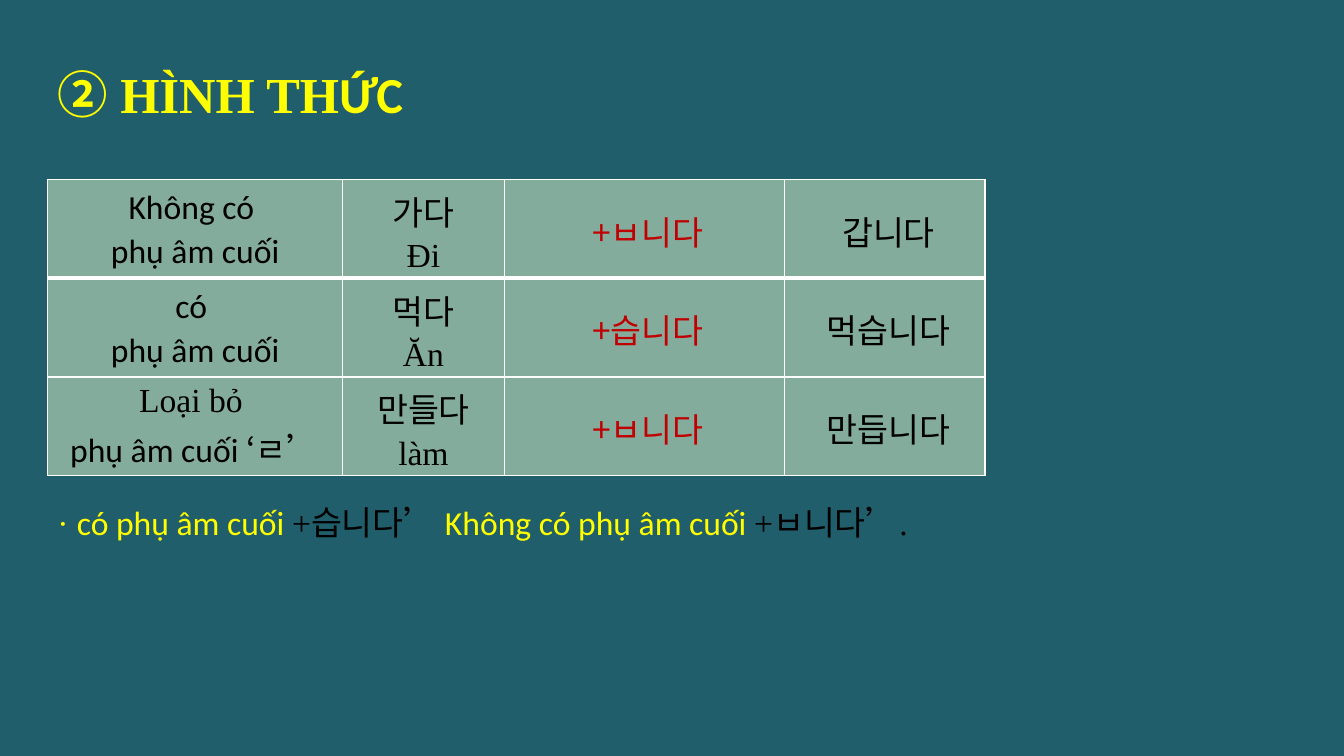
"""Builds a slide on the forms of the Korean formal verb ending."""
from lxml import etree
from pptx import Presentation
from pptx.dml.color import RGBColor
from pptx.enum.text import MSO_ANCHOR, PP_ALIGN
from pptx.oxml.ns import qn
from pptx.util import Inches, Pt

CENTER, JUSTIFY = PP_ALIGN.CENTER, PP_ALIGN.JUSTIFY
MIDDLE = MSO_ANCHOR.MIDDLE

COLOURS = {"back": "215E6B", "cell": "84AC9D", "line": "FFFFFF",
           "accent": "FFFF00", "text": "000000", "ending": "C00000"}
SANS, SERIF, KOREAN = "Calibri", "Times New Roman", "Noto Sans CJK KR"

TITLE = [("②", KOREAN, "accent"), (" HÌNH TH", SERIF, "accent"), ("ỨC", SANS, "accent")]
SUMMARY = [("· ", SERIF, "accent"), ("có phụ âm cuối ", SANS, "accent"),
           ("+습니다’ ", SERIF, "text"), ("Không có phụ âm cuối ", SANS, "accent"),
           ("+ㅂ니다’. ", SERIF, "text")]
FORMS = [
    ([("Không có ", SANS)], [("phụ âm cuối", SANS)], "가다", "Đi", "+ㅂ니다", "갑니다"),
    ([("có ", SANS)], [("phụ âm cuối", SANS)], "먹다", "Ăn", "+습니다", "먹습니다"),
    ([("Loại bỏ ", SERIF)], [("phụ âm cuối ", SANS), ("‘ㄹ’", KOREAN)],
     "만들다", "làm", "+ㅂ니다", "만듭니다"),
]

WIDTH, HEIGHT = 13.33, 7.5
LEFT = 0.47
COLUMNS = [2.93, 1.6, 2.78, 1.99]
ROW = 0.98
TABLE_TOP = 1.78
LINE_SPACING = 1.07


def fill_paragraph(para, spans, size, align, bold=False, after=0):
    para.alignment = align
    para.line_spacing = LINE_SPACING
    para.space_after = Pt(after)
    para.font.size = Pt(size)
    para.font.bold = bold
    for text, font, colour in spans:
        span = para.add_run()
        span.text = text
        span.font.name = font
        span.font.color.rgb = RGBColor.from_string(COLOURS[colour])
        east_asian = etree.SubElement(span.font._element, qn("a:ea"))
        east_asian.set("typeface", KOREAN)


def add_line(page, top, width, height, spans, size, bold=False):
    box = page.shapes.add_textbox(Inches(LEFT), Inches(top), Inches(width), Inches(height))
    box.text_frame.word_wrap = True
    fill_paragraph(box.text_frame.paragraphs[0], spans, size, JUSTIFY, bold, after=8)


def set_borders(cell, widths):
    properties = cell._tc.get_or_add_tcPr()
    for position, (side, width) in enumerate(widths.items()):
        line = etree.Element(qn(f"a:{side}"), w=str(Pt(width)))
        fill = etree.SubElement(line, qn("a:solidFill"))
        etree.SubElement(fill, qn("a:srgbClr"), val=COLOURS["line"])
        properties.insert(position, line)


def fill_cell(cell, lines, widths):
    cell.fill.solid()
    cell.fill.fore_color.rgb = RGBColor.from_string(COLOURS["cell"])
    cell.vertical_anchor = MIDDLE
    cell.margin_left = cell.margin_right = Inches(0.07)
    cell.margin_top = cell.margin_bottom = 0
    frame = cell.text_frame
    for number, spans in enumerate(lines):
        para = frame.add_paragraph() if number else frame.paragraphs[0]
        fill_paragraph(para, spans, 24, CENTER)
    set_borders(cell, widths)


def add_forms(page):
    frame = page.shapes.add_table(len(FORMS), len(COLUMNS), Inches(LEFT), Inches(TABLE_TOP),
                                  Inches(sum(COLUMNS)), Inches(ROW * len(FORMS)))
    table = frame.table
    for column, width in zip(table.columns, COLUMNS):
        column.width = Inches(width)
    for index, (first, second, verb, meaning, ending, result) in enumerate(FORMS):
        table.rows[index].height = Inches(ROW)
        rule = [[(text, font, "text") for text, font in spans] for spans in (first, second)]
        cells = [rule,
                 [[(verb, KOREAN, "text")], [(meaning, SERIF, "text")]],
                 [[(" " + ending, KOREAN, "ending")]],
                 [[(" " + result, KOREAN, "text")]]]
        widths = {"lnL": 1, "lnR": 1, "lnT": 3 if index == 1 else 1,
                  "lnB": 3 if index == 0 else 1}
        for column, lines in enumerate(cells):
            fill_cell(table.cell(index, column), lines, widths)


def main():
    deck = Presentation()
    deck.slide_width, deck.slide_height = Inches(WIDTH), Inches(HEIGHT)
    page = deck.slides.add_slide(deck.slide_layouts[6])
    page.background.fill.solid()
    page.background.fill.fore_color.rgb = RGBColor.from_string(COLOURS["back"])
    add_line(page, 0.54, 5.25, 0.7, TITLE, 36, bold=True)
    add_forms(page)
    add_line(page, 4.9, 9.43, 0.5, SUMMARY, 24)
    deck.save("out.pptx")


if __name__ == "__main__":
    main()
